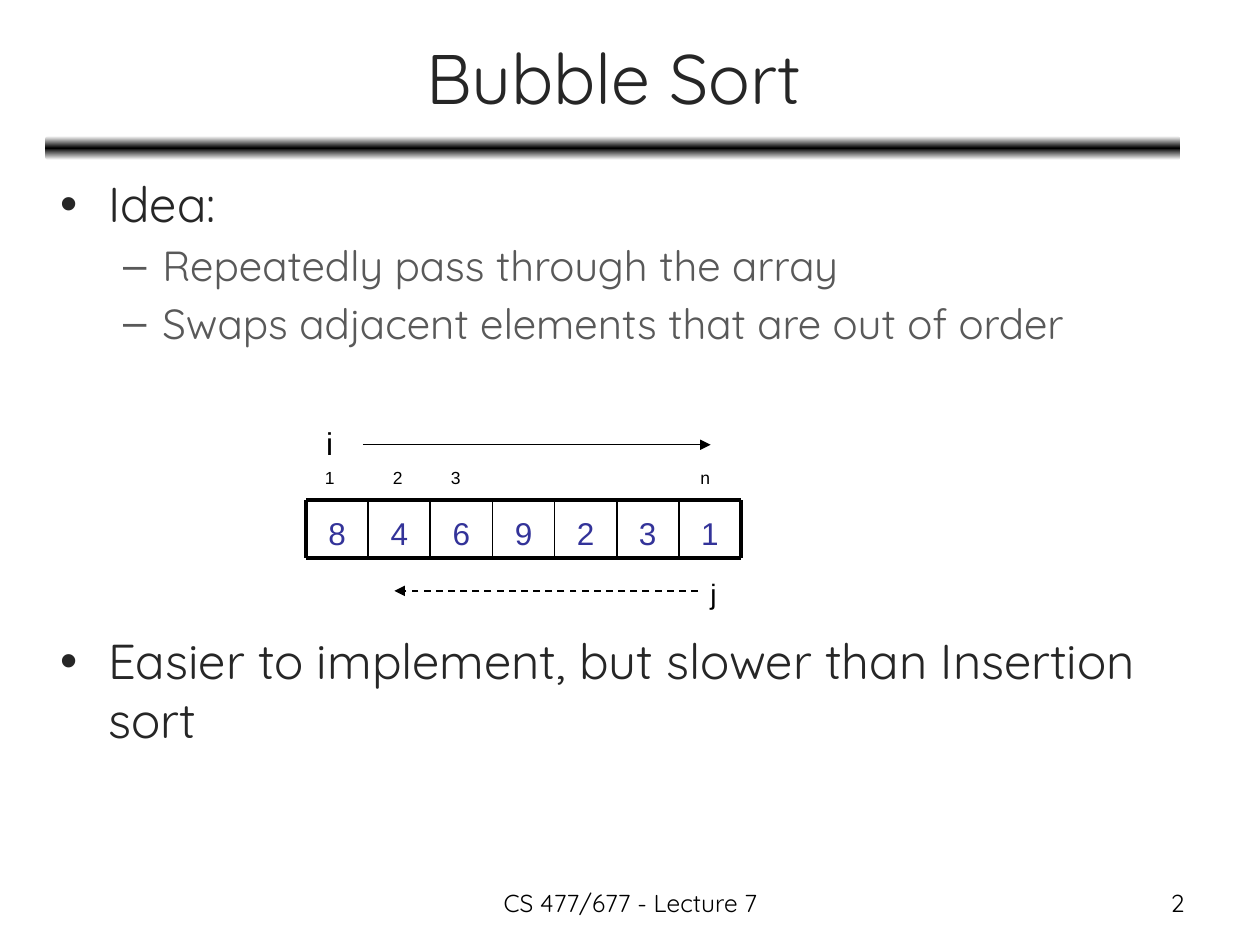
from copy import deepcopy

from lxml import etree
from pptx import Presentation
from pptx.dml.color import RGBColor
from pptx.enum.dml import MSO_LINE
from pptx.enum.shapes import MSO_CONNECTOR, MSO_SHAPE
from pptx.enum.text import MSO_ANCHOR, PP_ALIGN
from pptx.oxml.ns import qn
from pptx.util import Inches, Pt

BLACK = RGBColor(0x00, 0x00, 0x00)
WHITE = RGBColor(0xFF, 0xFF, 0xFF)
INK = RGBColor(0x26, 0x26, 0x26)
GREY = RGBColor(0x59, 0x59, 0x59)
INDIGO = RGBColor(0x33, 0x33, 0x99)
HEADING_FONT, LABEL_FONT = "Quicksand", "Arial"
LEFT, CENTER, RIGHT = PP_ALIGN.LEFT, PP_ALIGN.CENTER, PP_ALIGN.RIGHT
TOP, MIDDLE, BOTTOM = MSO_ANCHOR.TOP, MSO_ANCHOR.MIDDLE, MSO_ANCHOR.BOTTOM
DASH = MSO_LINE.DASH
STRAIGHT = MSO_CONNECTOR.STRAIGHT
ROUNDED = MSO_SHAPE.ROUNDED_RECTANGLE


def add_run(p, text, size, color, font):
    r = p.add_run()
    r.text = text
    r.font.size, r.font.name = Pt(size), font
    r.font.color.rgb = color


def add_label(s, box, text, size, color=BLACK, font=LABEL_FONT,
              align=LEFT, anchor=TOP, wrap=True):
    tf = s.shapes.add_textbox(*map(Inches, box)).text_frame
    tf.word_wrap, tf.vertical_anchor = wrap, anchor
    p = tf.paragraphs[0]
    p.alignment = align
    add_run(p, text, size, color, font)


def add_line(s, x1, y1, x2, y2, width, arrow=False, dash=None):
    line = s.shapes.add_connector(STRAIGHT, *map(Inches, (x1, y1, x2, y2)))
    line.line.color.rgb, line.line.width = BLACK, Pt(width)
    if dash:
        line.line.dash_style = dash
    if arrow:
        etree.SubElement(line.line._get_or_add_ln(), qn("a:tailEnd"), type="triangle")
    etree.SubElement(line._element.spPr, qn("a:effectLst"))


def add_title(s, box, text):
    title = s.shapes.title
    title.left, title.top, title.width, title.height = map(Inches, box)
    tf = title.text_frame
    tf.vertical_anchor = MIDDLE
    p = tf.paragraphs[0]
    p.alignment = CENTER
    add_run(p, text, 40, INK, HEADING_FONT)


def add_rule(s, box):
    """Bar below the title that fades to white above and below."""
    bar = s.shapes.add_shape(ROUNDED, *map(Inches, box))
    bar.shadow.inherit = False
    bar.line.fill.background()
    bar.fill.gradient()
    bar.fill.gradient_angle = 90
    first = bar.fill.gradient_stops[0]._gs
    first.addnext(deepcopy(first))
    for stop, position, color in zip(bar.fill.gradient_stops, (0, 0.5, 1),
                                     (WHITE, BLACK, WHITE)):
        stop.position = position
        stop.color.rgb = color


def add_bullets(s, box, items):
    """Items are (level, text, space before in points)."""
    levels = (("•", 0.38, 0.38, 28, INK), ("–", 0.81, 0.31, 24, GREY))
    tf = s.shapes.add_textbox(*map(Inches, box)).text_frame
    tf.word_wrap = True
    for i, (level, text, before) in enumerate(items):
        bullet, margin, hang, size, color = levels[level]
        p = tf.add_paragraph() if i else tf.paragraphs[0]
        p.level, p.space_before = level, Pt(before)
        pPr = p._p.get_or_add_pPr()
        pPr.set("marL", str(Inches(margin)))
        pPr.set("indent", str(-Inches(hang)))
        etree.SubElement(pPr, qn("a:buFont"), typeface=LABEL_FONT)
        etree.SubElement(pPr, qn("a:buChar"), char=bullet)
        add_run(p, text, size, color, HEADING_FONT)


def add_array(s, box, values):
    left, top, width, height = box
    bottom, cell = top + height, width / len(values)
    for i, value in enumerate(values):
        add_label(s, (left + i * cell, top, cell, height), value, 18, INDIGO,
                  align=CENTER, anchor=BOTTOM)
    for y in (top, bottom):
        add_line(s, left, y, left + width, y, 2.25)
    for i in range(len(values) + 1):
        x = left + i * cell
        add_line(s, x, top, x, bottom, 2.25 if i in (0, len(values)) else 1)


def add_array_diagram(s, box, values):
    """Array with index labels and the directions of i and j."""
    left, top, width, height = box
    add_array(s, (left, top + 0.65, width, 0.46), values)
    for dx, index in ((0.05, "1"), (0.59, "2"), (1.05, "3"), (3.03, "n")):
        add_label(s, (left + dx, top + 0.34, 0.25, 0.27), index, 10)
    add_label(s, (left + 0.06, top, 0.26, 0.4), "i", 18, wrap=False)
    add_line(s, left + 0.45, top + 0.21, left + 3.21, top + 0.21, 0.75, arrow=True)
    bottom = top + height
    add_label(s, (left + 3.11, bottom - 0.37, 0.25, 0.37), "j", 16, wrap=False)
    add_line(s, left + 3.11, bottom - 0.21, left + 0.7, bottom - 0.21, 1,
             arrow=True, dash=DASH)


def add_footer(s, top, text, number):
    for left, width, content, align in ((3.42, 3.17, text, CENTER),
                                        (7.17, 2.33, number, RIGHT)):
        add_label(s, (left, top, width, 0.35), content, 14,
                  font=HEADING_FONT, align=align)


def main():
    prs = Presentation()
    prs.slide_width, prs.slide_height = Inches(10), Inches(7.5)
    s = prs.slides.add_slide(prs.slide_layouts[5])
    add_rule(s, (0.36, 1.08, 9.01, 0.19))
    add_footer(s, 7, "CS 477/677 - Lecture 7", "2")
    add_title(s, (0.37, 0.11, 9, 0.99), "Bubble Sort")
    add_bullets(s, (0.38, 1.33, 9, 5.55), (
        (0, "Idea:", 0),
        (1, "Repeatedly pass through the array", 4),
        (1, "Swaps adjacent elements that are out of order", 4),
        (0, "Easier to implement, but slower than Insertion sort", 162),
    ))
    add_array_diagram(s, (2.43, 3.32, 3.45, 1.58), "8469231")
    prs.save("out.pptx")


if __name__ == "__main__":
    main()
